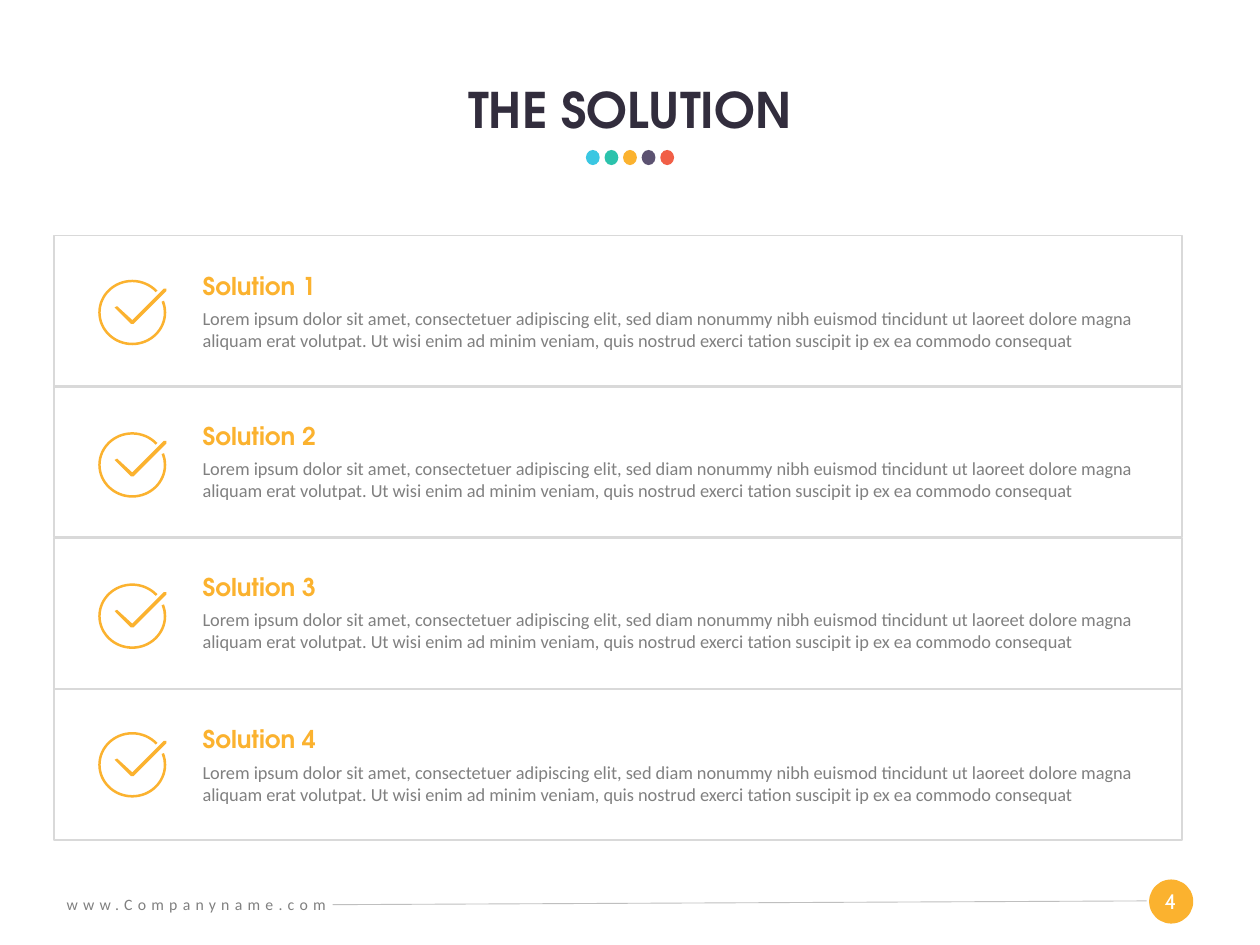
import math
from dataclasses import dataclass
from itertools import pairwise

from lxml import etree
from pptx import Presentation
from pptx.dml.color import RGBColor
from pptx.enum.shapes import MSO_CONNECTOR, MSO_SHAPE
from pptx.enum.text import MSO_ANCHOR, MSO_AUTO_SIZE, PP_ALIGN
from pptx.oxml.ns import qn
from pptx.util import Inches, Pt

RECTANGLE, ROUNDED, OVAL = MSO_SHAPE.RECTANGLE, MSO_SHAPE.ROUNDED_RECTANGLE, MSO_SHAPE.OVAL
STRAIGHT = MSO_CONNECTOR.STRAIGHT
TOP, BOTTOM = MSO_ANCHOR.TOP, MSO_ANCHOR.BOTTOM
FIT_SHAPE, NO_FIT = MSO_AUTO_SIZE.SHAPE_TO_FIT_TEXT, MSO_AUTO_SIZE.NONE
LEFT, CENTER = PP_ALIGN.LEFT, PP_ALIGN.CENTER

AMBER, GREY, WHITE, INK = "FBB22F", "808080", "FFFFFF", "322D3D"
PANEL_LINE, FOOTER_LINE = "D9D9D9", "BFBFBF"
DOT_COLORS = ["3AC7E2", "2BC2AC", AMBER, "5C5271", "F15F47"]
DOT_LEFT, DOT_SPAN = 4.65, 0.59

PANEL_LEFT, PANEL_WIDTH, PANEL_HEIGHT = 0.43, 8.95, 1.2
TEXT_LEFT, ICON_LEFT = 1.51, 0.78
DESCRIPTION = (
    "Lorem ipsum dolor sit amet, consectetuer adipiscing elit, sed diam nonummy nibh "
    "euismod tincidunt ut laoreet dolore magna aliquam erat volutpat. Ut wisi enim ad "
    "minim veniam, quis nostrud exerci tation suscipit ip ex ea commodo consequat"
)

TICK = [(0.27, 0.32), (0.15, 0.21), (0.13, 0.22), (0.14, 0.23), (0.26, 0.35),
        (0.28, 0.35), (0.54, 0.09), (0.54, 0.07), (0.52, 0.07)]
RING_CENTER_X, RING_CENTER_Y = 0.27, 0.26
RING_ANGLES = [-21, 0, 90, 180, 270, 318]

Point = tuple[float, float]


@dataclass
class Box:
    left: float
    top: float
    width: float
    height: float

    def lengths(self) -> list:
        return [Inches(v) for v in (self.left, self.top, self.width, self.height)]


@dataclass
class TextStyle:
    font: str
    size: float
    color: str
    bold: bool = False
    align: PP_ALIGN = LEFT


@dataclass
class Solution:
    heading: str
    panel_top: float
    heading_top: float
    icon_top: float


TITLE_STYLE = TextStyle("TeX Gyre Adventor", 28, INK, True, CENTER)
HEADING_STYLE = TextStyle("TeX Gyre Adventor", 14, AMBER, True)
BODY_STYLE = TextStyle("Calibri", 10.5, GREY)
ADDRESS_STYLE = TextStyle("Calibri", 9, GREY)
NUMBER_STYLE = TextStyle("Cabin", 12, WHITE, align=CENTER)

SOLUTIONS = [
    Solution("Solution 1", 1.87, 2.1, 2.22),
    Solution("Solution 2", 3.06, 3.29, 3.43),
    Solution("Solution 3", 4.27, 4.49, 4.63),
    Solution("Solution 4", 5.47, 5.7, 5.81),
]


def rgb(color: str) -> RGBColor:
    return RGBColor.from_string(color)


def paint(shape, color: str) -> None:
    shape.shadow.inherit = False
    shape.fill.solid()
    shape.fill.fore_color.rgb = rgb(color)
    shape.line.fill.background()


def add_filled(slide, kind: MSO_SHAPE, box: Box, color: str):
    shape = slide.shapes.add_shape(kind, *box.lengths())
    paint(shape, color)
    return shape


def add_text(slide, box: Box, text: str, style: TextStyle, wrap: bool = True,
             fit=FIT_SHAPE, anchor=TOP):
    textbox = slide.shapes.add_textbox(*box.lengths())
    frame = textbox.text_frame
    frame_format = {"word_wrap": wrap, "auto_size": fit, "vertical_anchor": anchor}
    for name, value in frame_format.items():
        setattr(frame, name, value)
    paragraph = frame.paragraphs[0]
    paragraph.alignment = style.align
    run = paragraph.add_run()
    run.text = text
    font_format = {"name": style.font, "size": Pt(style.size), "bold": style.bold}
    for name, value in font_format.items():
        setattr(run.font, name, value)
    run.font.color.rgb = rgb(style.color)
    return textbox


def arc(radius_x: float, radius_y: float) -> list[Point]:
    """Start of the ring's arc, then two control points and an end per Bézier piece."""
    def at(angle: float, pull: float = 0) -> Point:
        cos, sin = math.cos(angle), math.sin(angle)
        return (RING_CENTER_X + radius_x * (cos - pull * sin),
                RING_CENTER_Y + radius_y * (sin + pull * cos))

    angles = [math.radians(a) for a in RING_ANGLES]
    points = [at(angles[0])]
    for start, end in pairwise(angles):
        pull = 4 / 3 * math.tan((end - start) / 4)
        points += [at(start, pull), at(end, -pull), at(end)]
    return points


def curve(lines: list) -> None:
    """Turn each three line segments into one cubic Bézier segment."""
    for first, second, third in zip(lines[::3], lines[1::3], lines[2::3]):
        bezier = etree.Element(qn("a:cubicBezTo"))
        first.addprevious(bezier)
        for line in (first, second, third):
            bezier.append(line[0])
            line.getparent().remove(line)


def add_check_icon(slide, top: float) -> None:
    outer, inner = arc(0.27, 0.26), arc(0.25, 0.24)
    ring, tick = ([(Inches(ICON_LEFT + x), Inches(top + y)) for x, y in outline]
                  for outline in (outer + inner[::-1], TICK))
    builder = slide.shapes.build_freeform(*ring[0])
    builder.add_line_segments(ring[1:], close=True)
    builder.move_to(*tick[0])
    builder.add_line_segments(tick[1:], close=True)
    icon = builder.convert_to_shape()
    paint(icon, AMBER)
    lines = list(icon._element.spPr.iter(qn("a:lnTo")))
    curve(lines[:len(outer) - 1])
    curve(lines[len(outer):len(ring) - 1])


def add_solution(slide, solution: Solution) -> None:
    panel_box = Box(PANEL_LEFT, solution.panel_top, PANEL_WIDTH, PANEL_HEIGHT)
    panel = slide.shapes.add_shape(RECTANGLE, *panel_box.lengths())
    panel.shadow.inherit = False
    panel.fill.background()
    panel.line.color.rgb = rgb(PANEL_LINE)
    panel.line.width = Pt(1)
    top = solution.heading_top
    add_text(slide, Box(TEXT_LEFT, top + 0.29, 7.87, 0.53), DESCRIPTION, BODY_STYLE)
    add_text(slide, Box(TEXT_LEFT, top, 7.69, 0.39), solution.heading, HEADING_STYLE)


def add_footer(slide) -> None:
    badge = add_filled(slide, ROUNDED, Box(9.12, 6.98, 0.35, 0.35), AMBER)
    badge.adjustments[0] = 0.5
    number = add_text(slide, Box(9.1, 7, 0.38, 0.3), "4", NUMBER_STYLE, wrap=False)
    rule = slide.shapes.add_connector(
        STRAIGHT, Inches(2.64), Inches(7.18), Inches(9.1), Inches(7.15))
    rule.end_connect(number, 1)
    rule.line.color.rgb = rgb(FOOTER_LINE)
    rule.line.width = Pt(0.5)
    etree.SubElement(rule._element.spPr, qn("a:effectLst"))
    address = add_text(slide, Box(0.43, 7.05, 3.2, 0.25), "www.Companyname.com", ADDRESS_STYLE)
    letters = address.text_frame.paragraphs[0].runs[0]
    letters.font._element.set("spc", "300")


def add_header(slide) -> None:
    for i, color in enumerate(DOT_COLORS):
        left = DOT_LEFT + DOT_SPAN * i / (len(DOT_COLORS) - 1)
        add_filled(slide, OVAL, Box(left, 1.19, 0.11, 0.12), color)
    title = add_text(slide, Box(0, 0.28, 10, 0.87), "THE SOLUTION", TITLE_STYLE,
                     fit=NO_FIT, anchor=BOTTOM)
    title.text_frame.paragraphs[0].line_spacing = 0.9


def main() -> None:
    deck = Presentation()
    deck.slide_width, deck.slide_height = Inches(10), Inches(7.5)
    slide = deck.slides.add_slide(deck.slide_layouts[6])
    add_footer(slide)
    add_header(slide)
    for solution in SOLUTIONS:
        add_solution(slide, solution)
    for solution in SOLUTIONS:
        add_check_icon(slide, solution.icon_top)
    deck.save("out.pptx")


if __name__ == "__main__":
    main()
